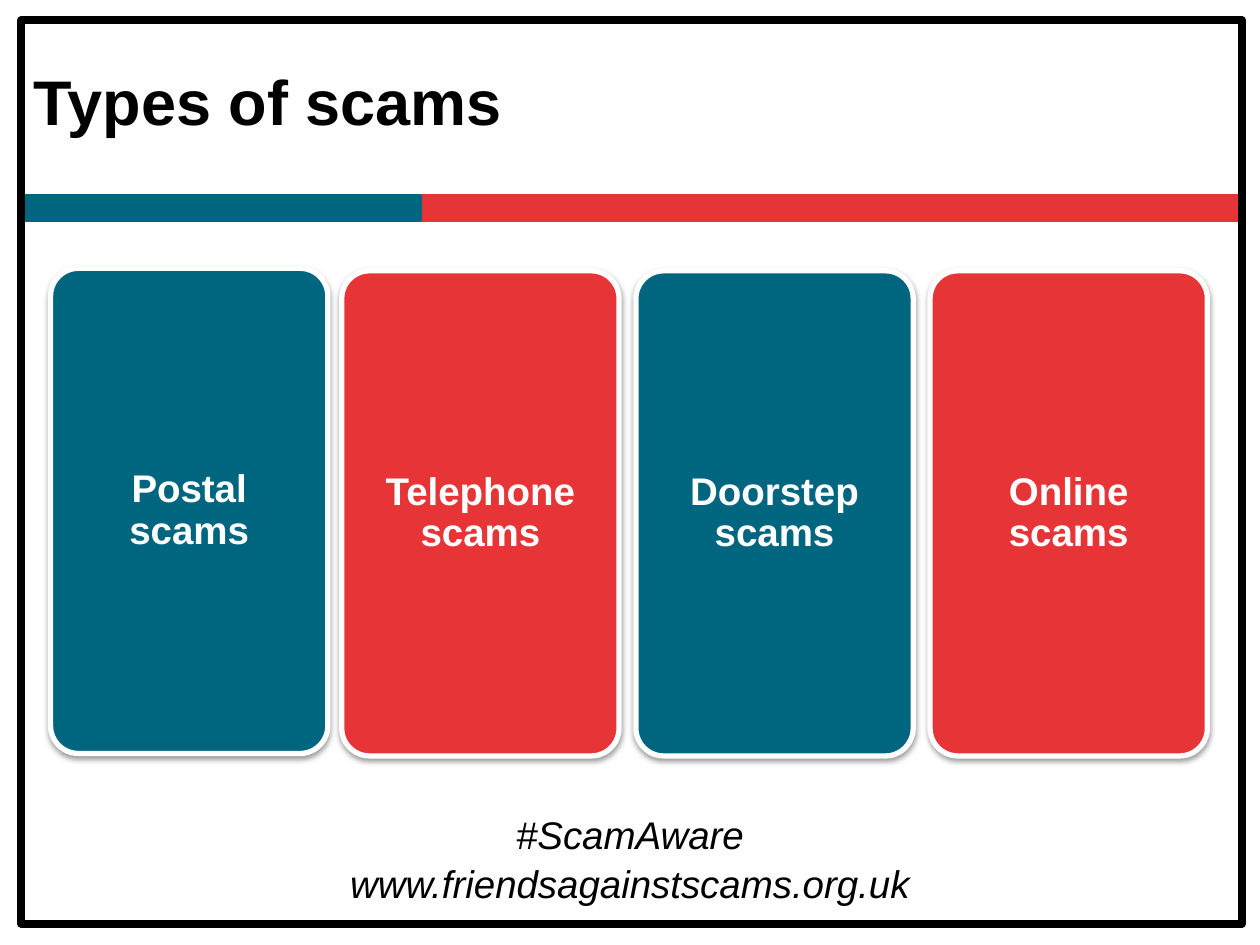
from lxml import etree
from pptx import Presentation
from pptx import util as u
from pptx.dml.color import RGBColor
from pptx.enum import shapes, text
from pptx.oxml.ns import qn

THEME = {
    "font": "Arial",
    "teal": RGBColor(0x00, 0x66, 0x80),
    "red": RGBColor(0xE7, 0x34, 0x37),
    "black": RGBColor(0, 0, 0),
    "white": RGBColor(255, 255, 255),
    "title_size": 36,
    "body_size": 22,
}

# Content: lengths in centimetres
TITLE = "Types of scams"
FOOTERS = [("#ScamAware", 16.23), ("www.friendsagainstscams.org.uk", 17.22)]
BANDS = [("red", 1.07, 23.98), ("teal", 0.43, 8.05)]  # colour, left, width
CARDS = [  # label, colour, left, top
    ("Postal scams", "teal", 1.02, 5.41),
    ("Telephone scams", "red", 6.89, 5.46),
    ("Doorstep scams", "teal", 12.82, 5.46),
    ("Online scams", "red", 18.75, 5.46),
]
CARD_SIZE = (5.59, 9.78)


def add_span(para, words, size, color, bold=False, italic=False):
    span = para.add_run()
    span.text = words
    span.font.name = THEME["font"]
    span.font.size = u.Pt(size)
    span.font.bold = bold
    span.font.italic = italic
    span.font.color.rgb = THEME[color]


def add_panel(page, kind, place, fill, line, line_width):
    panel = page.shapes.add_shape(kind, *map(u.Cm, place))
    panel.shadow.inherit = False
    if fill:
        panel.fill.solid()
        panel.fill.fore_color.rgb = THEME[fill]
    else:
        panel.fill.background()
    panel.line.color.rgb = THEME[line]
    panel.line.width = u.Pt(line_width)
    return panel


def add_soft_shadow(panel):
    effects = panel._element.spPr.find(qn("a:effectLst"))
    shadow = etree.SubElement(
        effects, qn("a:outerShdw"), blurRad=str(u.Pt(3.1)),
        dist=str(u.Pt(1.6)), dir="5400000", rotWithShape="0")
    color = etree.SubElement(shadow, qn("a:srgbClr"), val=str(THEME["black"]))
    etree.SubElement(color, qn("a:alpha"), val="38000")


def add_card(page, label, color, left, top):
    card = add_panel(page, shapes.MSO_SHAPE.ROUNDED_RECTANGLE,
                     (left, top, *CARD_SIZE), color, "white", 3)
    card.adjustments[0] = 0.1
    add_soft_shadow(card)
    frame = card.text_frame
    frame.word_wrap = True
    frame.vertical_anchor = text.MSO_ANCHOR.MIDDLE
    para = frame.paragraphs[0]
    para.alignment = text.PP_ALIGN.CENTER
    para.line_spacing = 0.9
    add_span(para, label, THEME["body_size"], "white", bold=True)


def add_footer(page, words, top):
    box = page.shapes.add_textbox(0, u.Cm(top), u.Cm(25.4), u.Cm(1.19))
    box.text_frame.word_wrap = True
    para = box.text_frame.paragraphs[0]
    para.alignment = text.PP_ALIGN.CENTER
    add_span(para, words, THEME["body_size"], "black", italic=True)


def main():
    deck = Presentation()
    deck.slide_width, deck.slide_height = u.Cm(25.4), u.Cm(19.05)
    page = deck.slides.add_slide(deck.slide_layouts[5])

    # Title
    title = page.shapes.title
    title.left, title.top = u.Cm(0.43), u.Cm(0.43)
    title.width, title.height = u.Cm(23.93), u.Cm(3.18)
    title.text_frame.vertical_anchor = text.MSO_ANCHOR.MIDDLE
    para = title.text_frame.paragraphs[0]
    para.alignment = text.PP_ALIGN.LEFT
    add_span(para, TITLE, THEME["title_size"], "black", bold=True)

    # Two-colour band and page frame
    rectangle = shapes.MSO_SHAPE.RECTANGLE
    for color, left, width in BANDS:
        add_panel(page, rectangle, (left, 3.94, width, 0.51), color, color, 2)
    add_panel(page, rectangle, (0.43, 0.41, 24.61, 18.21), None, "black", 4.5)

    # Scam types
    for card in CARDS:
        add_card(page, *card)

    # Footer lines
    for words, top in FOOTERS:
        add_footer(page, words, top)

    deck.save("out.pptx")


if __name__ == "__main__":
    main()
